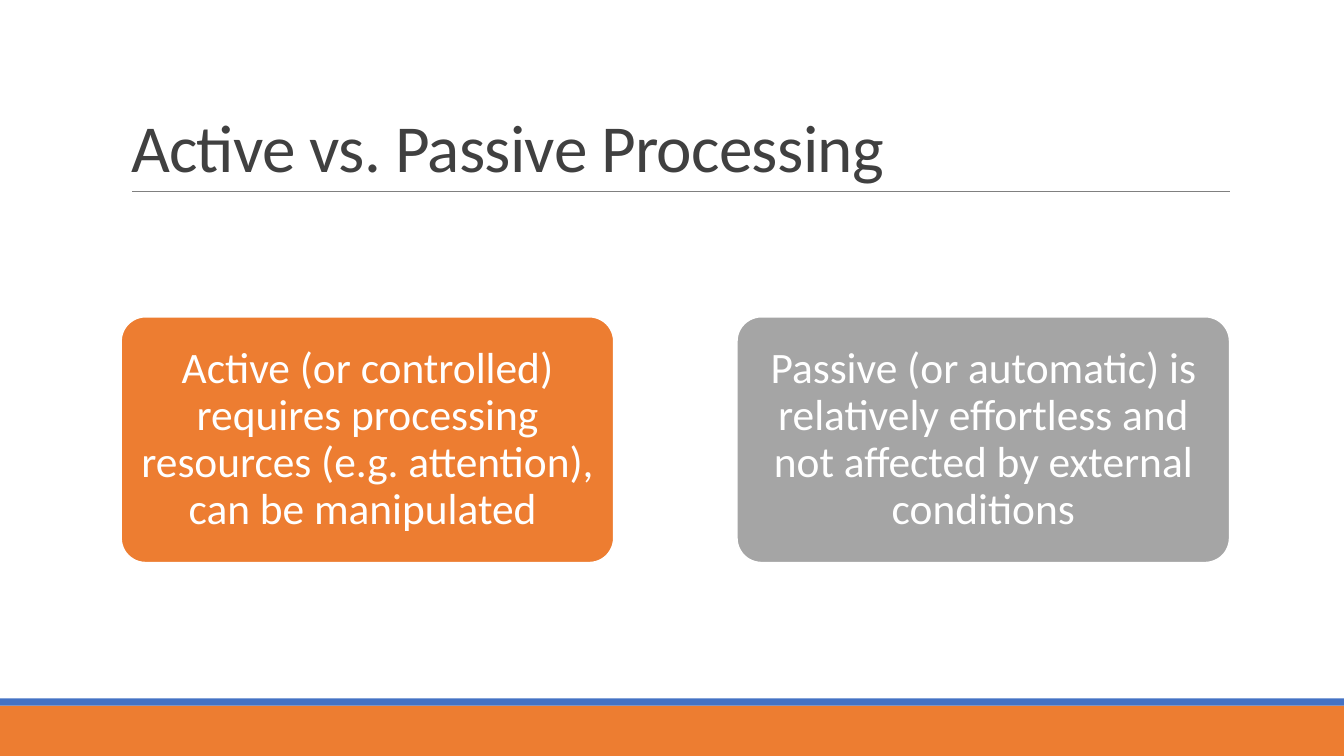
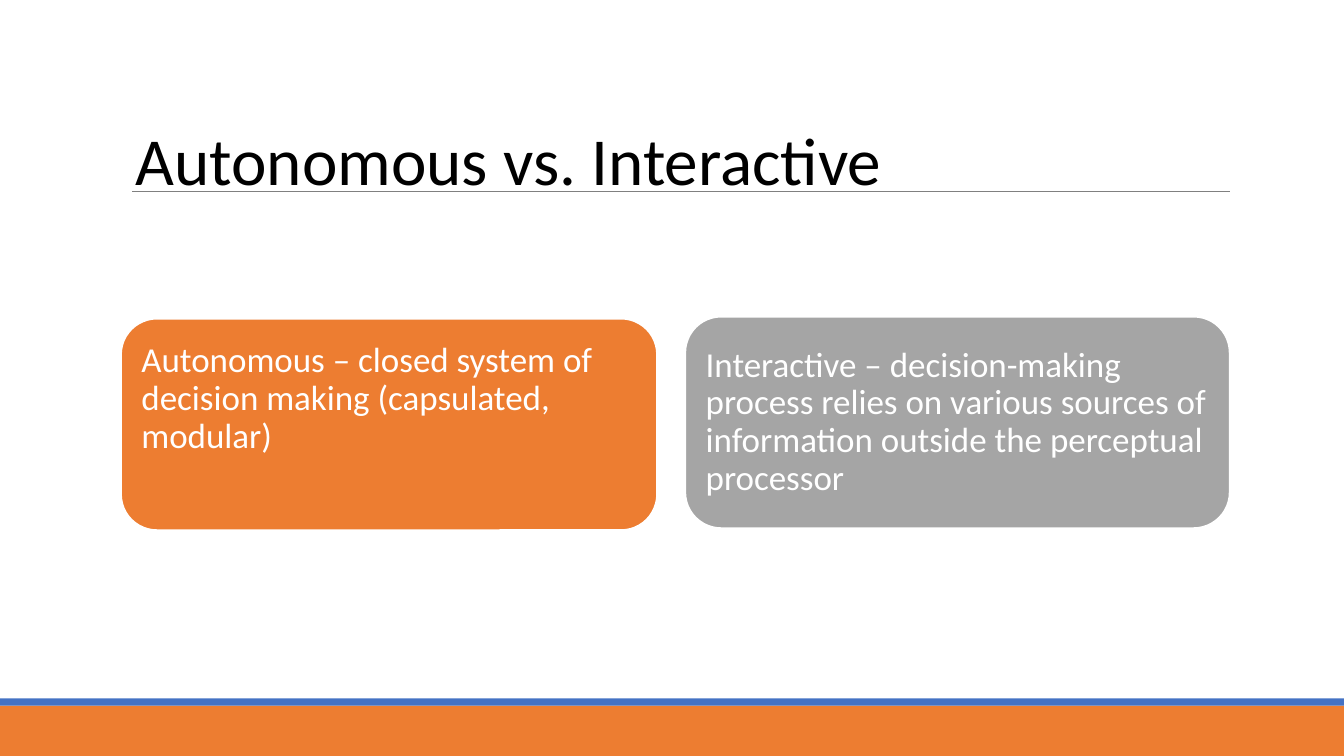
from lxml import etree
from pptx import Presentation
from pptx.dml.color import RGBColor
from pptx.enum import shapes, text
from pptx.oxml.ns import qn
from pptx.util import Cm, Pt

SLIDE_WIDTH, SLIDE_HEIGHT = 33.87, 19.05
LEFT_EDGE, RIGHT_EDGE = 3.05, 30.99
TITLE_ONLY_LAYOUT = 5


def rgb(hex_code):
    return RGBColor.from_string(hex_code)


class Deck:
    """Holds the shared style and the slide being built."""

    FONT = "Calibri"
    ORANGE, BLUE, GREY = "ED7D31", "4472C4", "A5A5A5"
    WHITE, BLACK, CHARCOAL, RULE = "FFFFFF", "000000", "404040", "808080"

    def __init__(self):
        self.presentation = Presentation()
        self.presentation.slide_width = Cm(SLIDE_WIDTH)
        self.presentation.slide_height = Cm(SLIDE_HEIGHT)
        self.slide = None

    def new_slide(self):
        layout = self.presentation.slide_layouts[TITLE_ONLY_LAYOUT]
        self.slide = self.presentation.slides.add_slide(layout)
        self.band(17.78, 1.27, self.ORANGE)
        self.band(17.6, 0.18, self.BLUE)
        self.title_rule()

    def block(self, kind, left, top, width, height, fill):
        shape = self.slide.shapes.add_shape(
            kind, Cm(left), Cm(top), Cm(width), Cm(height))
        shape.shadow.inherit = False
        shape.fill.solid()
        shape.fill.fore_color.rgb = rgb(fill)
        return shape

    def band(self, top, height, fill):
        band = self.block(shapes.MSO_SHAPE.RECTANGLE,
                          0, top, SLIDE_WIDTH, height, fill)
        band.line.fill.background()

    def title_rule(self):
        rule = self.slide.shapes.add_connector(
            shapes.MSO_CONNECTOR.STRAIGHT,
            Cm(3.33), Cm(4.83), Cm(RIGHT_EDGE), Cm(4.83))
        rule.line.color.rgb = rgb(self.RULE)
        rule.line.width = Pt(0.5)
        etree.SubElement(rule._element.spPr, qn("a:effectLst"))

    def style(self, paragraph, size, color, align, line_spacing):
        paragraph.alignment = align
        paragraph.line_spacing = line_spacing
        font = paragraph.font
        font.name, font.size = self.FONT, Pt(size)
        font.color.rgb = rgb(color)

    def title(self, wording, left, top, height, color, anchor,
              line_spacing=1.0, tracking=0):
        """Fill the title placeholder; tracking is in points."""
        title = self.slide.shapes.title
        title.left, title.top = Cm(left), Cm(top)
        title.width, title.height = Cm(RIGHT_EDGE - left), Cm(height)
        frame = title.text_frame
        frame.text = wording
        frame.word_wrap = True
        frame.auto_size = text.MSO_AUTO_SIZE.NONE
        frame.vertical_anchor = anchor
        heading = frame.paragraphs[0]
        self.style(heading, 48, color, text.PP_ALIGN.LEFT, line_spacing)
        if tracking:
            run_properties = heading.runs[0]._r.get_or_add_rPr()
            run_properties.set("spc", str(round(tracking * 100)))

    def card(self, wording, left, top, width, height, fill, size, align,
             insets, corner):
        """Add a rounded card; insets are left/right, top and bottom."""
        card = self.block(shapes.MSO_SHAPE.ROUNDED_RECTANGLE,
                          left, top, width, height, fill)
        card.adjustments[0] = corner
        card.line.color.rgb = rgb(self.WHITE)
        card.line.width = Pt(1.25)
        side, above, below = insets
        frame = card.text_frame
        frame.margin_left = frame.margin_right = Cm(side)
        frame.margin_top, frame.margin_bottom = Cm(above), Cm(below)
        frame.word_wrap = True
        frame.vertical_anchor = text.MSO_ANCHOR.MIDDLE
        frame.text = wording
        self.style(frame.paragraphs[0], size, self.WHITE, align, 0.9)


def active_vs_passive(deck):
    deck.new_slide()
    deck.title("Active vs. Passive Processing", LEFT_EDGE, 0.79, 4.04,
               deck.CHARCOAL, text.MSO_ANCHOR.BOTTOM,
               line_spacing=0.85, tracking=-0.5)
    width = 12.42
    cards = (
        ("Active (or controlled) requires processing resources "
         "(e.g. attention), can be manipulated ", LEFT_EDGE, deck.ORANGE),
        ("Passive (or automatic) is relatively effortless and not affected "
         "by external conditions", RIGHT_EDGE - width, deck.GREY),
    )
    for wording, left, fill in cards:
        deck.card(wording, left, 7.98, width, 6.2, fill, 31,
                  text.PP_ALIGN.CENTER, insets=(0.33, 0.28, 0.28), corner=0.1)


def autonomous_vs_interactive(deck):
    deck.new_slide()
    deck.title("Autonomous vs. Interactive", 3.16, 2.85, 2.31,
               deck.BLACK, text.MSO_ANCHOR.TOP)
    autonomous_width, interactive_width = 13.51, 13.72
    cards = (
        ("Autonomous – closed system of decision making "
         "(capsulated, modular)",
         LEFT_EDGE, 8.03, autonomous_width, deck.ORANGE, 1.78),
        ("Interactive – decision-making process relies on various sources "
         "of information outside the perceptual processor",
         RIGHT_EDGE - interactive_width, 7.98, interactive_width,
         deck.GREY, 0.51),
    )
    for wording, left, top, width, fill, below in cards:
        deck.card(wording, left, top, width, 5.33, fill, 25,
                  text.PP_ALIGN.LEFT, insets=(0.25, 0.51, below), corner=0.17)


def main():
    deck = Deck()
    active_vs_passive(deck)
    autonomous_vs_interactive(deck)
    deck.presentation.save("out.pptx")


if __name__ == "__main__":
    main()
